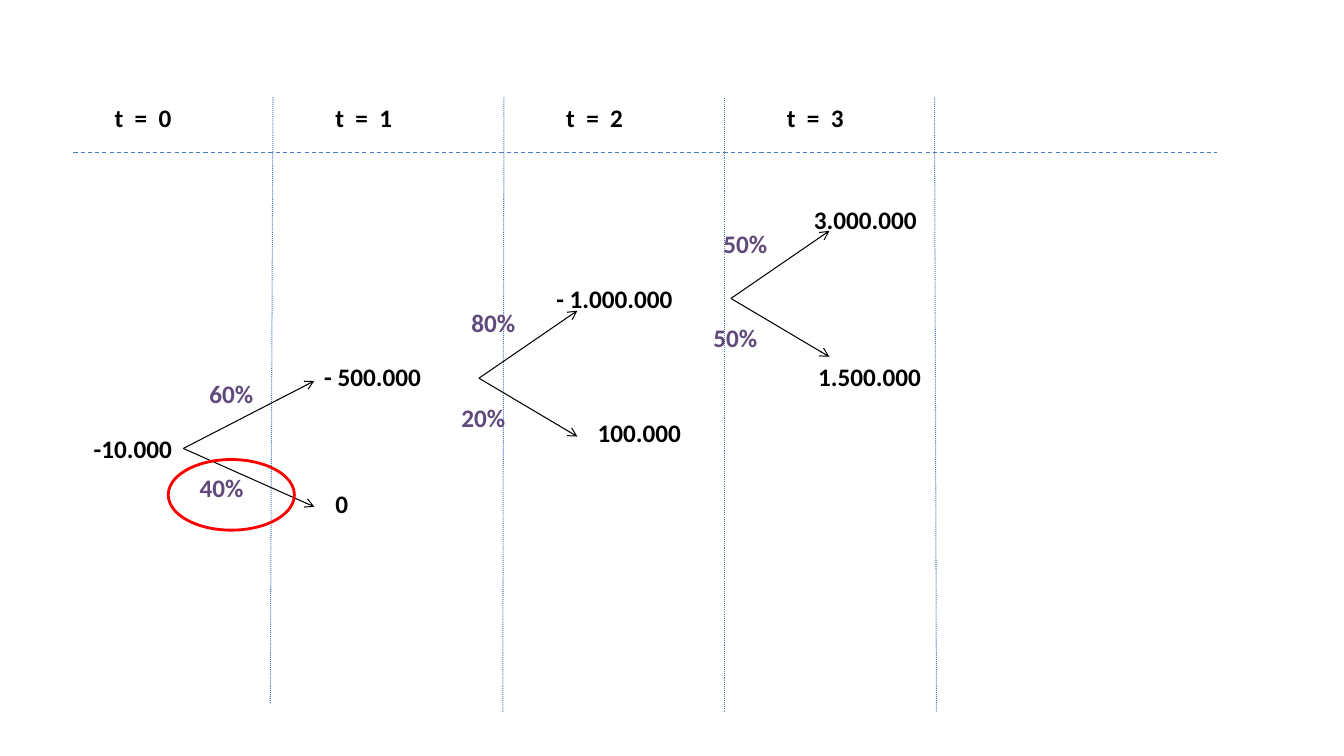
from lxml.etree import SubElement
from pptx import Presentation
from pptx.dml.color import RGBColor
from pptx.enum.dml import MSO_LINE
from pptx.enum.shapes import MSO_CONNECTOR, MSO_SHAPE
from pptx.enum.text import MSO_AUTO_SIZE
from pptx.oxml.ns import qn
from pptx.util import Cm, Pt

BLACK, BLUE, PURPLE, RED = "000000", "4B7EBC", "604A7B", "FF0000"

presentation = Presentation()
presentation.slide_width, presentation.slide_height = Cm(33.87), Cm(19.05)
slide = presentation.slides.add_slide(presentation.slide_layouts[6])


def add_line(start, end, color, dash=None, arrow=False):
    line = slide.shapes.add_connector(
        MSO_CONNECTOR.STRAIGHT, *(Cm(value) for value in (*start, *end)))
    line.line.color.rgb = RGBColor.from_string(color)
    line.line.width = Pt(0.75)
    if dash:
        line.line.dash_style = dash
    if arrow:
        SubElement(line.line._get_or_add_ln(), qn("a:tailEnd"), type="arrow")
    SubElement(line._element.spPr, qn("a:effectLst"))


def add_label(text, left, top, width, color=BLACK):
    shape = slide.shapes.add_textbox(Cm(left), Cm(top), Cm(width), Cm(1.02))
    frame = shape.text_frame
    frame.word_wrap = False
    frame.auto_size = MSO_AUTO_SIZE.SHAPE_TO_FIT_TEXT
    paragraph = frame.paragraphs[0]
    paragraph.text = text
    font_format = {"name": "Calibri", "size": Pt(18), "bold": True}
    for name, value in font_format.items():
        setattr(paragraph.font, name, value)
    paragraph.font.color.rgb = RGBColor.from_string(color)


# Timeline: header rule and period dividers
add_line((1.85, 3.84), (30.68, 3.84), BLUE, MSO_LINE.DASH)
for top_x, bottom_x, bottom in [(6.88, 6.81, 17.73), (12.7, 12.67, 17.93),
                                (18.26, 18.26, 17.93), (23.55, 23.6, 17.93)]:
    add_line((top_x, 2.46), (bottom_x, bottom), BLUE, MSO_LINE.ROUND_DOT)

# Period headings
for period, left in enumerate([2.64, 8.2, 14.02, 19.58]):
    add_label(f"t  =  {period}", left, 2.46, 1.96)

# Branches: fork x, fork y, arrow run, label offset, upper and lower chance
for x, y, run, offset, upper, lower in [
        (4.62, 11.3, 3.3, 0.41, "60%", "40%"),
        (12.07, 9.53, 2.48, -0.44, "80%", "20%"),
        (18.42, 7.52, 2.48, -0.44, "50%", "50%")]:
    for rise in (-1.7, 1.47):
        add_line((x, y), (x + run, y + rise), BLACK, arrow=True)
    add_label(upper, x + offset, y - 1.9, 1.63, PURPLE)
    add_label(lower, x + offset - 0.25, y + 0.48, 1.63, PURPLE)

# Cash flows
for amount, left, top, width in [
        ("-10.000", 2.11, 10.8, 2.51),
        ("- 500.000", 7.92, 8.99, 2.97),
        ("0", 8.2, 12.17, 0.84),
        ("- 1.000.000", 13.77, 7.01, 3.48),
        ("100.000", 14.81, 10.39, 2.64),
        ("3.000.000", 20.26, 5.03, 3.12),
        ("1.500.000", 20.37, 8.97, 3.12)]:
    add_label(amount, left, top, width)

# Highlight around the 40% branch
highlight = slide.shapes.add_shape(
    MSO_SHAPE.OVAL, Cm(4.24), Cm(11.58), Cm(3.18), Cm(1.78))
highlight.shadow.inherit = False
highlight.fill.background()
highlight.line.color.rgb = RGBColor.from_string(RED)
highlight.line.width = Pt(2)

presentation.save("out.pptx")
